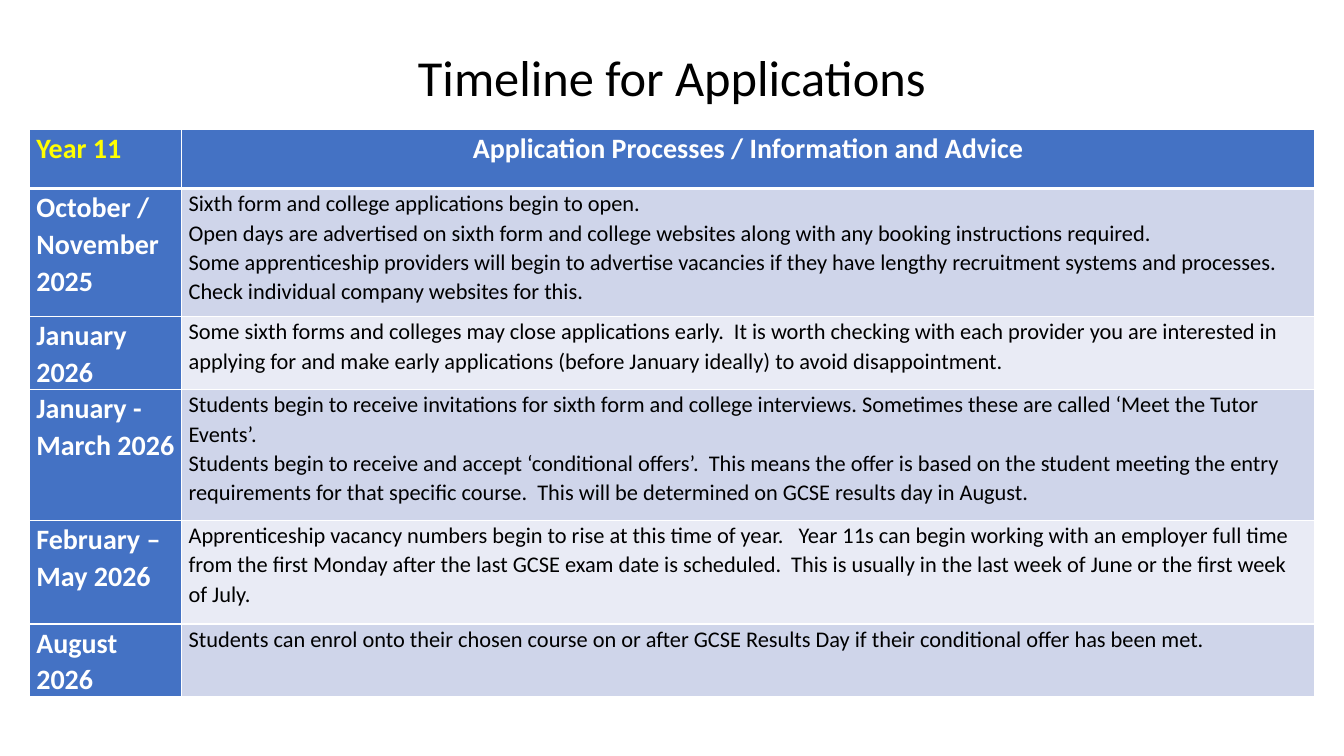
"""Builds a slide with a Year 11 application timeline table."""
from lxml.etree import SubElement
from pptx import Presentation
from pptx.dml.color import RGBColor
from pptx.enum.text import MSO_ANCHOR, PP_ALIGN
from pptx.oxml.ns import qn
from pptx.util import Pt

BLACK = RGBColor(0x00, 0x00, 0x00)
WHITE = RGBColor(0xFF, 0xFF, 0xFF)
YELLOW = RGBColor(0xFF, 0xFF, 0x00)
BLUE = RGBColor(0x44, 0x72, 0xC4)
BANDS = [RGBColor(0xCF, 0xD5, 0xEA), RGBColor(0xE9, 0xEB, 0xF5)]

TIMELINE = [
    (42, "Year 11", ["Application Processes / Information and Advice"]),
    (91.5, "October / November 2025", [
        "Sixth form and college applications begin to open.",
        "Open days are advertised on sixth form and college websites along with any booking "
        "instructions required.",
        "Some apprenticeship providers will begin to advertise vacancies if they have lengthy "
        "recruitment systems and processes.  Check individual company websites for this."]),
    (52, "January 2026", [
        "Some sixth forms and colleges may close applications early.  It is worth checking with "
        "each provider you are interested in applying for and make early applications (before "
        "January ideally) to avoid disappointment."]),
    (93.5, "January - March 2026", [
        "Students begin to receive invitations for sixth form and college interviews. Sometimes "
        "these are called ‘Meet the Tutor Events’.",
        "Students begin to receive and accept ‘conditional offers’.  This means the offer is based "
        "on the student meeting the entry requirements for that specific course.  This will be "
        "determined on GCSE results day in August."]),
    (74, "February – May 2026", [
        "Apprenticeship vacancy numbers begin to rise at this time of year.   Year 11s can begin "
        "working with an employer full time from the first Monday after the last GCSE exam date is "
        "scheduled.  This is usually in the last week of June or the first week of July."]),
    (52, "August 2026", [
        "Students can enrol onto their chosen course on or after GCSE Results Day if their "
        "conditional offer has been met."]),
]


def write_paragraphs(text_frame, texts, size, color, bold, alignment, line_spacing):
    for index, text in enumerate(texts):
        paragraph = text_frame.paragraphs[0] if index == 0 else text_frame.add_paragraph()
        paragraph.alignment = alignment
        paragraph.line_spacing = line_spacing
        run = paragraph.add_run()
        run.text = text
        run.font.color.rgb = color
        for name, value in {"name": "Calibri", "size": Pt(size), "bold": bold}.items():
            setattr(run.font, name, value)


def add_borders(cell, widths):
    properties = cell._tc.get_or_add_tcPr()
    for index, (side, width) in enumerate(widths.items()):
        line = SubElement(properties, qn(f"a:{side}"), w=str(Pt(width)))
        fill = SubElement(line, qn("a:solidFill"))
        SubElement(fill, qn("a:srgbClr"), val=str(WHITE))
        properties.insert(index, line)


presentation = Presentation()
presentation.slide_width = Pt(960)
presentation.slide_height = Pt(540)
slide = presentation.slides.add_slide(presentation.slide_layouts[6])

title = slide.shapes.add_textbox(Pt(66), Pt(23), Pt(828), Pt(69)).text_frame
title.word_wrap = True
title.vertical_anchor = MSO_ANCHOR.MIDDLE
write_paragraphs(title, ["Timeline for Applications"], 36, BLACK, False, PP_ALIGN.CENTER, 0.9)

total_height = sum(height for height, period, advice in TIMELINE)
table = slide.shapes.add_table(
    len(TIMELINE), 2, Pt(21), Pt(92.75), Pt(918), Pt(total_height)).table
table.columns[0].width = Pt(108.75)
table.columns[1].width = Pt(809.25)

cell_format = {"margin_left": Pt(5), "margin_right": Pt(5), "margin_top": 0, "margin_bottom": 0}
for row, (height, period, advice) in enumerate(TIMELINE):
    table.rows[row].height = Pt(height)
    for column, texts in enumerate([[period], advice]):
        cell = table.cell(row, column)
        for name, value in cell_format.items():
            setattr(cell, name, value)
        is_heading = row == 0 or column == 0
        cell.fill.solid()
        cell.fill.fore_color.rgb = BLUE if is_heading else BANDS[(row - 1) % 2]
        color = YELLOW if row == column == 0 else WHITE if is_heading else BLACK
        alignment = PP_ALIGN.CENTER if row == 0 and column == 1 else PP_ALIGN.LEFT
        write_paragraphs(cell.text_frame, texts, 20 if is_heading else 16, color,
                         is_heading, alignment, 1.07)
        add_borders(cell, {"lnL": 1, "lnR": 1, "lnT": 3 if row == 1 else 1,
                           "lnB": 3 if row == 0 else 1})

presentation.save("out.pptx")
